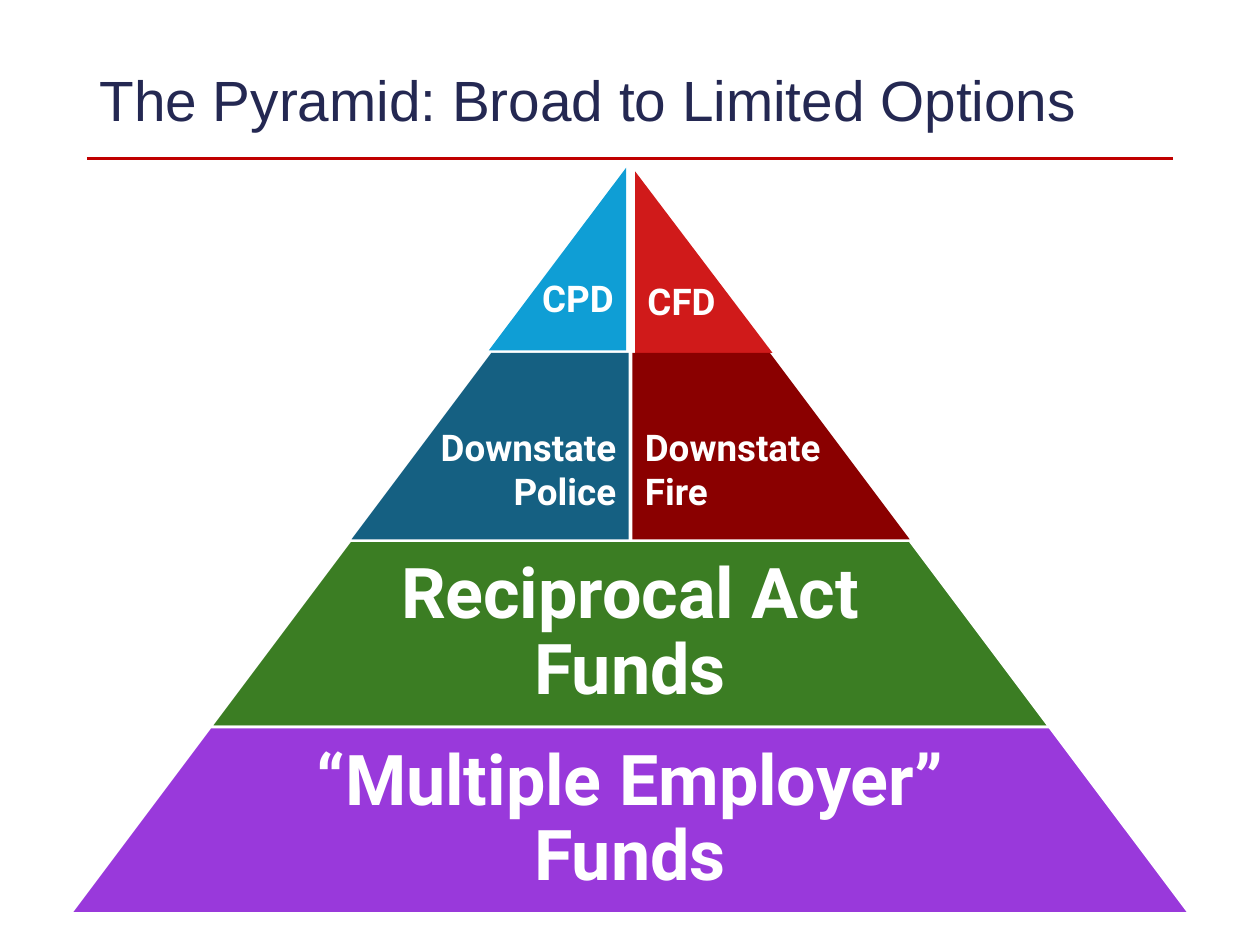
from lxml.etree import SubElement
from pptx import Presentation
from pptx.dml.color import RGBColor
from pptx.enum.shapes import MSO_CONNECTOR
from pptx.enum.text import MSO_ANCHOR, PP_ALIGN
from pptx.oxml.ns import qn
from pptx.util import Inches, Pt

WHITE = RGBColor(0xFF, 0xFF, 0xFF)
NAVY = RGBColor(0x24, 0x28, 0x52)
RULE_RED = RGBColor(0xC0, 0x00, 0x00)
GREEN = RGBColor(0x3B, 0x7D, 0x23)
PURPLE = RGBColor(0x99, 0x39, 0xDB)
LIGHT_BLUE = RGBColor(0x0F, 0x9E, 0xD5)
DARK_BLUE = RGBColor(0x15, 0x60, 0x82)
RED = RGBColor(0xD0, 0x1A, 0x1A)
DARK_RED = RGBColor(0x8A, 0x00, 0x00)

CENTER = 5
TIER_HEIGHT = 1.48
TIER_STEP = 1.11  # growth of the half width from one tier to the next


def add_run(paragraph, text, font_name, size, color, bold=False):
    run = paragraph.add_run()
    run.text = text
    run.font.name = font_name
    run.font.size = Pt(size)
    run.font.bold = bold
    run.font.color.rgb = color


def add_title(slide, text):
    title = slide.shapes.title
    title.left, title.top = Inches(0.69), Inches(0.4)
    title.width, title.height = Inches(8.62), Inches(0.84)
    title.text_frame.vertical_anchor = MSO_ANCHOR.MIDDLE
    paragraph = title.text_frame.paragraphs[0]
    paragraph.alignment = PP_ALIGN.LEFT
    paragraph.line_spacing = 0.9
    add_run(paragraph, text, "Arial", 32.4, NAVY)


def add_title_rule(slide):
    rule = slide.shapes.add_connector(
        MSO_CONNECTOR.STRAIGHT, Inches(0.69), Inches(1.26), Inches(9.31), Inches(1.26))
    rule.line.color.rgb = RULE_RED
    rule.line.width = Pt(1.75)
    SubElement(rule._element.spPr, qn("a:effectLst"))


def add_polygon(slide, points, color):
    start, *others = [(Inches(x), Inches(y)) for x, y in points]
    builder = slide.shapes.build_freeform(*start)
    builder.add_line_segments(others, close=True)
    shape = builder.convert_to_shape()
    shape.shadow.inherit = False
    shape.fill.solid()
    shape.fill.fore_color.rgb = color
    shape.line.fill.background()
    shape.text_frame.word_wrap = True
    return shape


def write_lines(shape, lines, size, alignment, line_spacing=1.0):
    frame = shape.text_frame
    for index, line in enumerate(lines):
        paragraph = frame.add_paragraph() if index else frame.paragraphs[0]
        paragraph.alignment = alignment
        paragraph.line_spacing = line_spacing
        add_run(paragraph, line, "Roboto", size, WHITE, bold=True)


def add_full_tier(slide, text, top, level, side_inset, color):
    """Add a trapezoid across the pyramid; level counts the tiers above it."""
    upper, lower = level * TIER_STEP, (level + 1) * TIER_STEP
    bottom = top + TIER_HEIGHT
    shape = add_polygon(slide, [
        (CENTER - lower, bottom), (CENTER - upper, top),
        (CENTER + upper, top), (CENTER + lower, bottom)], color)
    shape.line.color.rgb = WHITE
    shape.line.width = Pt(1.5)
    frame = shape.text_frame
    frame.vertical_anchor = MSO_ANCHOR.MIDDLE
    frame.margin_left = frame.margin_right = Inches(side_inset)
    write_lines(shape, [text], 40, PP_ALIGN.CENTER, 0.9)


def add_half_tier(slide, lines, inner, top, bottom, widths, bottom_inset, color):
    """Add a half tier; widths (top, bottom) run outwards from its inner edge."""
    side = -1 if inner < CENTER else 1
    upper, lower = widths
    points = [(inner, top), (inner, bottom), (inner + side * lower, bottom)]
    if upper:
        points.append((inner + side * upper, top))
    shape = add_polygon(slide, points, color)
    shape.text_frame.vertical_anchor = MSO_ANCHOR.BOTTOM
    shape.text_frame.margin_bottom = Inches(bottom_inset)
    write_lines(shape, lines, 21, PP_ALIGN.RIGHT if side < 0 else PP_ALIGN.LEFT)


def main():
    presentation = Presentation()
    presentation.slide_width, presentation.slide_height = Inches(10), Inches(7.5)
    slide = presentation.slides.add_slide(presentation.slide_layouts[5])

    add_title_rule(slide)
    add_title(slide, "The Pyramid: Broad to Limited Options")

    add_full_tier(slide, "Reciprocal Act Funds", 4.29, 2, 1.26, GREEN)
    add_full_tier(slide, "“Multiple Employer” Funds", 5.77, 3, 1.65, PURPLE)

    tip, middle = (0, 1.09), (1.09, 2.2)
    add_half_tier(slide, ["CPD"], 4.97, 1.33, 2.78, tip, 0.24, LIGHT_BLUE)
    add_half_tier(slide, ["CFD"], 5.04, 1.36, 2.8, tip, 0.24, RED)
    add_half_tier(slide, ["Downstate", "Police"], 4.99, 2.8, 4.28, middle, 0.21, DARK_BLUE)
    add_half_tier(slide, ["Downstate", "Fire"], 5.02, 2.8, 4.28, middle, 0.21, DARK_RED)

    presentation.save("out.pptx")


if __name__ == "__main__":
    main()
